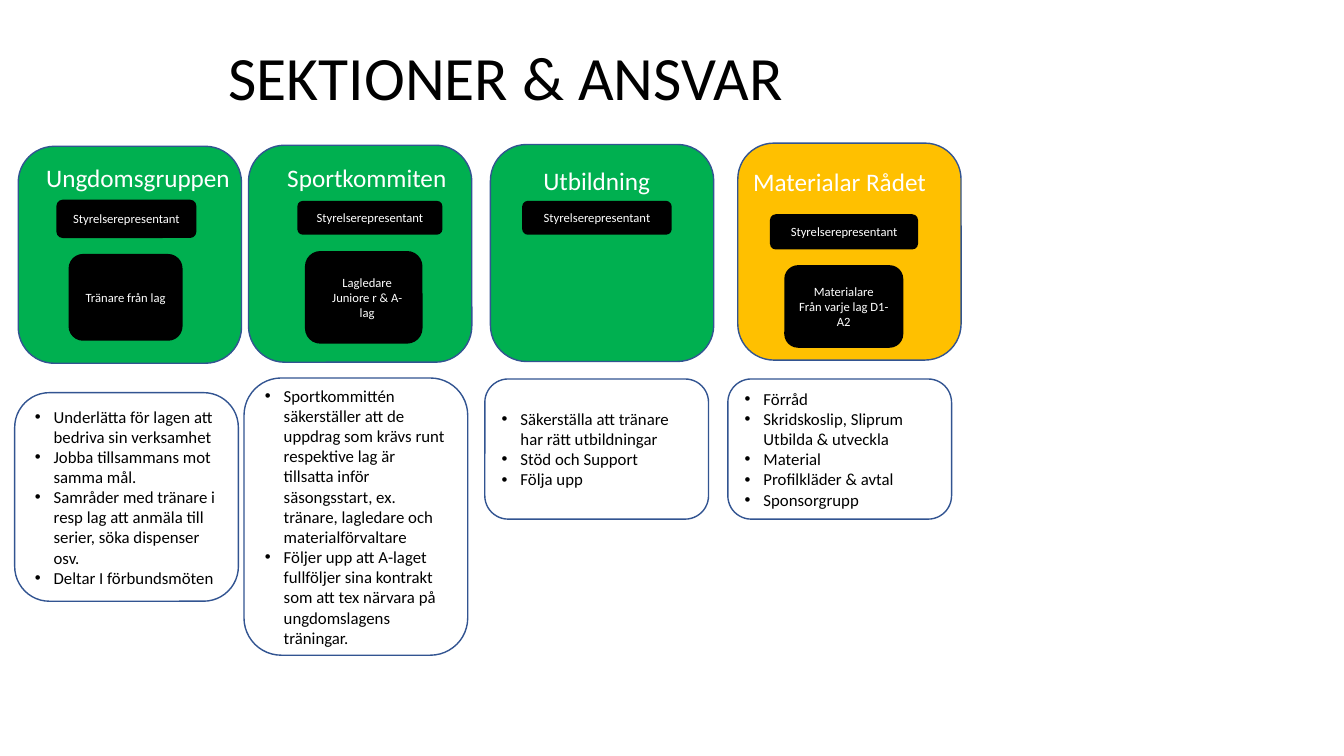
from lxml import etree
from pptx import Presentation
from pptx.dml.color import RGBColor
from pptx.enum.shapes import MSO_SHAPE
from pptx.enum.text import MSO_ANCHOR, PP_ALIGN
from pptx.oxml.ns import qn
from pptx.util import Pt

ROUNDED = MSO_SHAPE.ROUNDED_RECTANGLE
TOP, MIDDLE = MSO_ANCHOR.TOP, MSO_ANCHOR.MIDDLE
LEFT, CENTER = PP_ALIGN.LEFT, PP_ALIGN.CENTER

GREEN = RGBColor(0x00, 0xB0, 0x50)
AMBER = RGBColor(0xFF, 0xC0, 0x00)
BLUE = RGBColor(0x32, 0x54, 0x91)
BLACK = RGBColor(0x00, 0x00, 0x00)
WHITE = RGBColor(0xFF, 0xFF, 0xFF)

FONT = "Calibri"
BULLET_INDENT = Pt(13.5)
CARD_WIDTH, CARD_HEIGHT = 159.5, 155
REPRESENTATIVE = "Styrelserepresentant"

# Boxes are (left, top, width, height) in points
SECTIONS = [
    {
        "card": (13, 104.5), "color": GREEN,
        "heading": ("Ungdomsgruppen", (12.25, 112.3, 172.8, 28.8)),
        "roles": [
            ([REPRESENTATIVE], (40.3, 142.6, 100, 27.4), 7.2),
            (["Tränare från lag"], (49, 181.4, 81.4, 62), 7.2),
        ],
        "duties_box": (10.5, 280.5, 159.8, 149),
        "duties": [
            "Underlätta för lagen att bedriva sin verksamhet",
            "Jobba tillsammans mot samma mål.",
            "Samråder med tränare i resp lag att anmäla till serier, "
            "söka dispenser osv.",
            "Deltar I förbundsmöten",
        ],
    },
    {
        "card": (177.5, 103.75), "color": GREEN,
        "heading": ("Sportkommiten", (191.5, 112.3, 141.1, 28.8)),
        "roles": [
            ([REPRESENTATIVE], (212.4, 143.5, 103.7, 24.2), 7.2),
            (["Lagledare", "Juniore r & A-lag"], (217.8, 179.3, 84, 66.2), 12),
        ],
        "duties_box": (174.3, 270, 159.8, 198),
        "duties": [
            "Sportkommittén säkerställer att de uppdrag som krävs runt "
            "respektive lag är tillsatta inför säsongsstart, ex. tränare, "
            "lagledare och materialförvaltare",
            "Följer upp att A-laget fullföljer sina kontrakt som att tex "
            "närvara på ungdomslagens träningar.",
        ],
    },
    {
        "card": (350.3, 103.25), "color": GREEN,
        "heading": ("Utbildning", (355.7, 114.5, 141.1, 28.8)),
        "roles": [([REPRESENTATIVE], (373, 143.5, 106.8, 24.2), 7.2)],
        "duties_box": (346.3, 270.7, 159.8, 100.1),
        "duties": [
            "Säkerställa att tränare har rätt utbildningar",
            "Stöd och Support",
            "Följa upp",
        ],
    },
    {
        "card": (527, 102.25), "color": AMBER,
        "heading": ("Materialar Rådet", (519.8, 115.2, 159.8, 28.8)),
        "roles": [
            ([REPRESENTATIVE], (550, 153, 105.8, 25.2), 7.2),
            (["Materialare", "Från varje lag D1-A2"],
             (560.2, 189.4, 85, 59), 7.2),
        ],
        "duties_box": (519.9, 270.7, 159.8, 100.1),
        "duties": [
            "Förråd",
            "Skridskoslip, Sliprum Utbilda & utveckla",
            "Material",
            "Profilkläder & avtal",
            "Sponsorgrupp",
        ],
    },
]


def write_text(shape, lines, size, color=BLACK, align=LEFT, anchor=MIDDLE,
               bullets=False, spacing=None, left_inset=7.2):
    frame = shape.text_frame
    frame.word_wrap = True
    frame.vertical_anchor = anchor
    frame.margin_left = Pt(left_inset)
    for number, line in enumerate(lines):
        paragraph = frame.add_paragraph() if number else frame.paragraphs[0]
        if bullets:
            properties = paragraph._p.get_or_add_pPr()
            properties.set("marL", str(BULLET_INDENT))
            properties.set("indent", str(-BULLET_INDENT))
            font = etree.SubElement(properties, qn("a:buFont"))
            font.set("typeface", "Arial")
            etree.SubElement(properties, qn("a:buChar")).set("char", "•")
        paragraph.alignment = align
        if spacing:
            paragraph.line_spacing = spacing
        run = paragraph.add_run()
        run.text = line
        run.font.name = FONT
        run.font.size = Pt(size)
        run.font.color.rgb = color


def add_label(slide, box, text, size, **text_format):
    label = slide.shapes.add_textbox(*map(Pt, box))
    write_text(label, [text], size, **text_format)


def add_panel(slide, box, fill, line=None):
    panel = slide.shapes.add_shape(ROUNDED, *map(Pt, box))
    panel.shadow.inherit = False
    panel.fill.solid()
    panel.fill.fore_color.rgb = fill
    if line is None:
        panel.line.fill.background()
    else:
        panel.line.color.rgb = line
        panel.line.width = Pt(1)
    return panel


def add_section(slide, section):
    # Coloured card with its heading
    add_panel(slide, (*section["card"], CARD_WIDTH, CARD_HEIGHT),
              section["color"], BLUE)
    heading, heading_box = section["heading"]
    add_label(slide, heading_box, heading, 18, color=WHITE, align=CENTER,
              anchor=TOP)

    # Roles in the section
    for lines, box, inset in section["roles"]:
        role = add_panel(slide, box, BLACK)
        write_text(role, lines, 9, color=WHITE, align=CENTER, left_inset=inset)

    # Responsibilities below the card
    duties = add_panel(slide, section["duties_box"], WHITE, BLUE)
    write_text(duties, section["duties"], 12, bullets=True)


def main():
    presentation = Presentation()
    presentation.slide_width = Pt(960)
    presentation.slide_height = Pt(540)
    slide = presentation.slides.add_slide(presentation.slide_layouts[6])

    add_label(slide, (156.2, 12.2, 648, 90), "SEKTIONER & ANSVAR", 44,
              spacing=0.9)
    for section in SECTIONS:
        add_section(slide, section)

    presentation.save("out.pptx")


if __name__ == "__main__":
    main()
